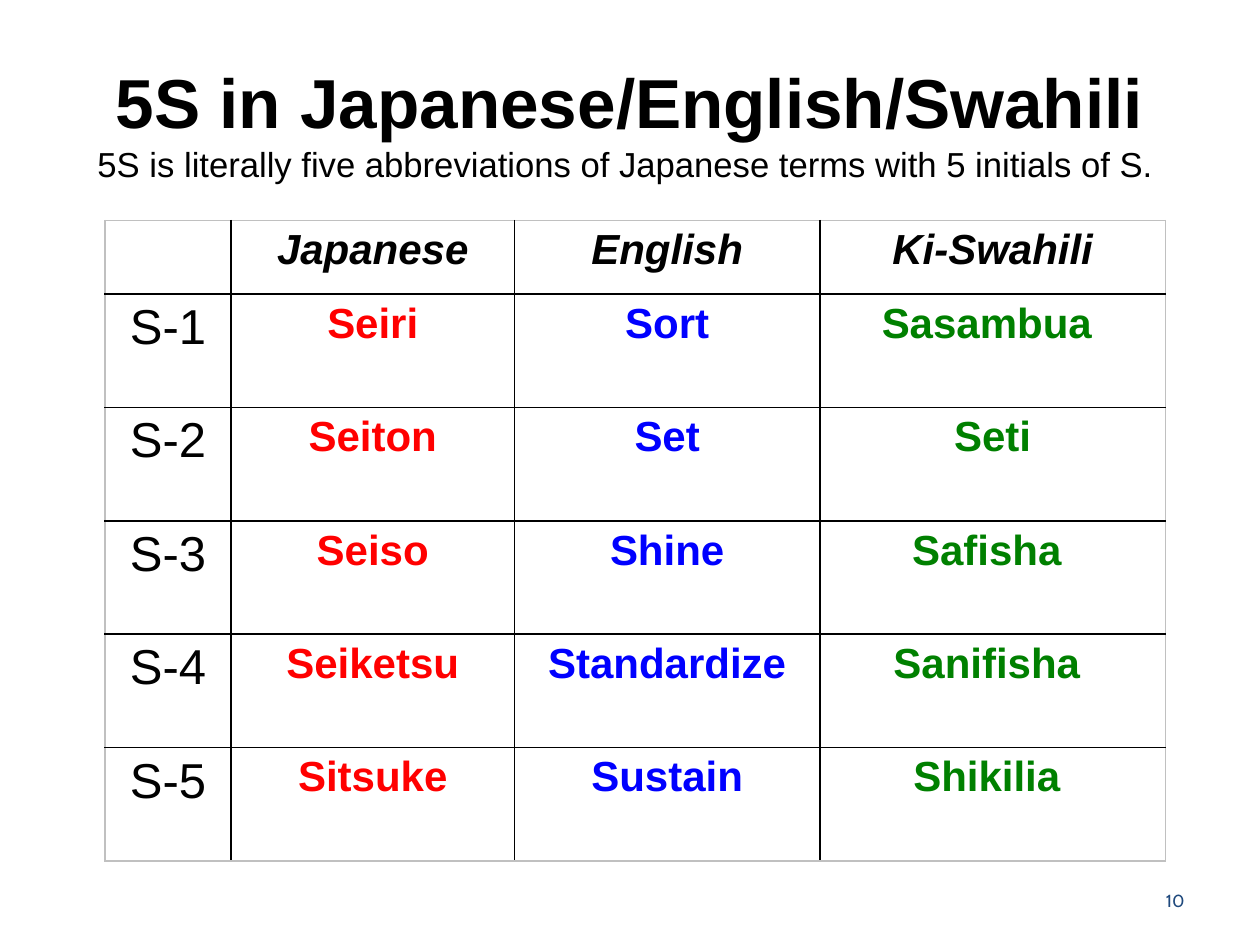
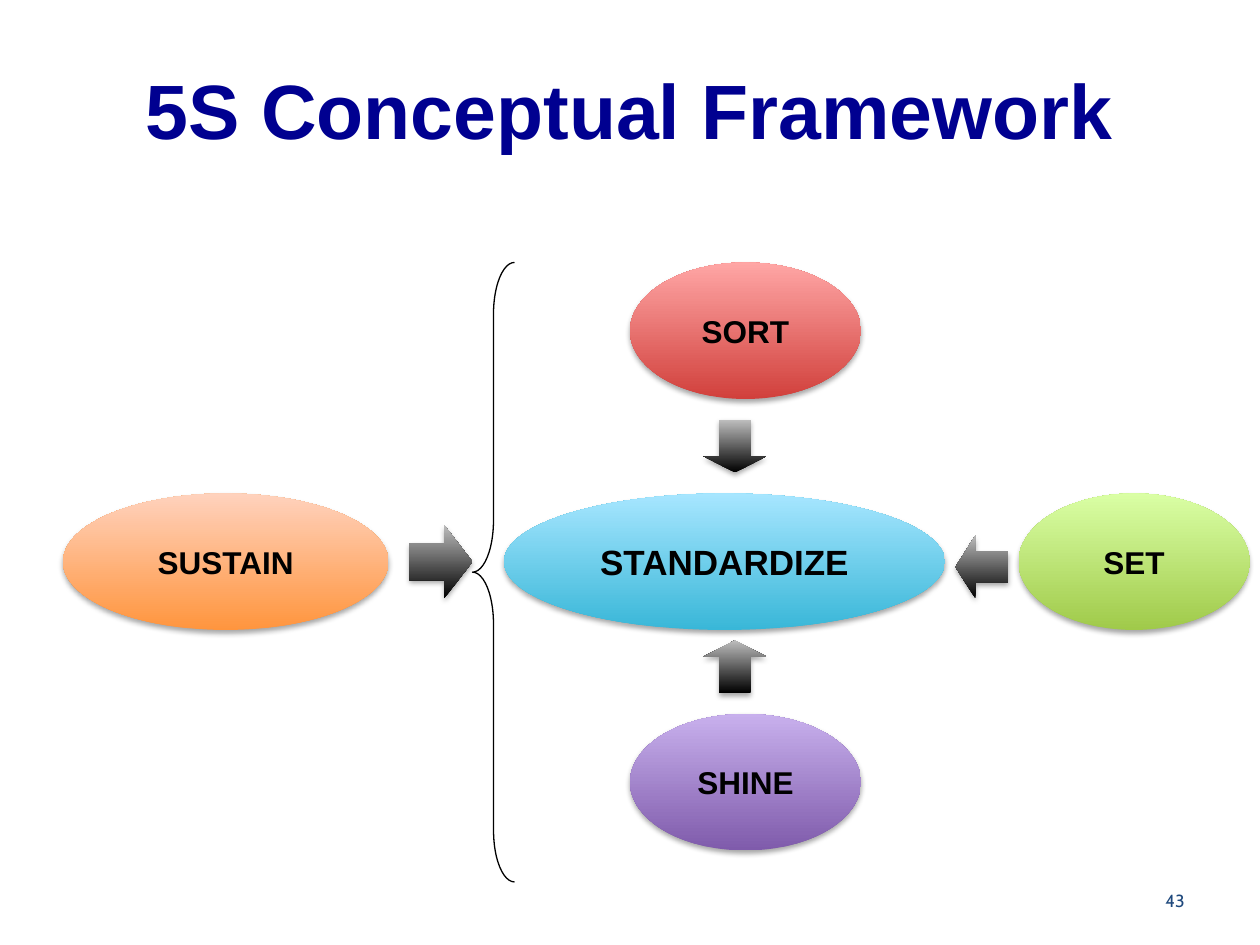
from dataclasses import dataclass
from lxml import etree
from pptx import Presentation
from pptx import util as u
from pptx.dml.color import RGBColor
from pptx.enum import shapes, text
from pptx.oxml import ns

Pt = u.Pt
MSO = shapes.MSO_SHAPE


@dataclass(frozen=True)
class Theme:
    font: str = "Arial"
    number_font: str = "Cabin"
    ink: str = "000000"
    navy: str = "000090"
    number: str = "1F497D"
    frame: str = "C0C0C0"
    arrow: tuple = ("000000", "BDBDBD")
    red: str = "FF0000"
    blue: str = "0000FF"
    green: str = "008000"
    title: float = 44
    table_title: float = 39.6
    subtitle: float = 19.8
    label: float = 28
    term: float = 24
    hub: float = 20
    node: float = 18
    page: float = 10


T = Theme()

# Content: terms table
TERMS_TITLE = "5S in Japanese/English/Swahili"
TERMS_SUBTITLE = "5S is literally five abbreviations of Japanese terms with 5 initials of S. "
TERMS = [
    ("", "Japanese", "English", "Ki-Swahili"),
    ("S-1", "Seiri", "Sort", "Sasambua "),
    ("S-2", "Seiton", "Set", "Seti"),
    ("S-3", "Seiso", "Shine", "Safisha "),
    ("S-4", "Seiketsu", "Standardize", "Sanifisha "),
    ("S-5", "Sitsuke", "Sustain", "Shikilia "),
]
COL_WIDTHS = (72, 162, 174.5, 197.5)
HEADER_HEIGHT, ROW_HEIGHT = 42, 64.8
HEADER_STYLE = dict(size=T.term, color=T.ink, bold=True, italic=True)
COLUMN_STYLES = [dict(size=T.label, color=T.ink)] + [
    dict(size=T.term, color=c, bold=True) for c in (T.red, T.blue, T.green)]

# Content: framework diagram, on rows and columns shared by its parts
FRAMEWORK_TITLE = "5S Conceptual Framework"
TOP, MIDDLE, BOTTOM = 150, 282, 408
NODE_W, NODE_H, CENTRE_X, ARROW_X = 132, 78, 360, 402
BRACE = (270, TOP, 24, 354)
NODES = [  # name, left, top, width, gradient, text size
    ("SORT", CENTRE_X, TOP, NODE_W, ("D1403C", "FFA6A5"), T.node),
    ("SET", 582, MIDDLE, NODE_W, ("A0CA4A", "DAFFA5"), T.node),
    ("SHINE", CENTRE_X, BOTTOM, NODE_W, ("7F5BAB", "C8B0ED"), T.node),
    ("STANDARDIZE", 288, MIDDLE, 252, ("39B7D8", "A7E6FF"), T.hub),
    ("SUSTAIN", 36, MIDDLE, 186, ("FF953E", "FFD2BD"), T.node),
]
ARROWS = [  # shape, box, head length ratio
    (MSO.RIGHT_ARROW, (234, 300, 36, 42), 0.45),
    (MSO.DOWN_ARROW, (ARROW_X, 240, 36, 30), 0.31),
    (MSO.LEFT_ARROW, (546, 306, 30, 36), 0.38),
    (MSO.UP_ARROW, (ARROW_X, 366, 36, 30), 0.31),
]


def pts(box):
    return [Pt(v) for v in box]


def sub(parent, tag, **attrs):
    return etree.SubElement(parent, ns.qn(tag), {k: str(v) for k, v in attrs.items()})


def add_run(p, words, size, color, name=T.font, bold=False, italic=False):
    r = p.add_run()
    r.text = words
    for key, value in dict(size=Pt(size), name=name, bold=bold, italic=italic).items():
        setattr(r.font, key, value)
    r.font.color.rgb = RGBColor.from_string(color)


def setup_frame(tf, align, **fmt):
    for key, value in dict(word_wrap=True, vertical_anchor=text.MSO_ANCHOR.MIDDLE, **fmt).items():
        setattr(tf, key, value)
    p = tf.paragraphs[0]
    p.alignment = align
    return p


def add_title(s, top, height, *lines):
    tb = s.shapes.add_textbox(*pts((36, top, 648, height)))
    p = setup_frame(tb.text_frame, text.PP_ALIGN.CENTER, margin_top=Pt(6), margin_bottom=0)
    for i, (words, style) in enumerate(lines):
        if i:
            p.add_line_break()
        add_run(p, words, **style)


def add_page_number(s, number):
    tb = s.shapes.add_textbox(*pts((516, 500.4, 168, 28.8)))
    p = setup_frame(tb.text_frame, text.PP_ALIGN.RIGHT)
    add_run(p, number, T.page, T.number, T.number_font)


def add_glossy(s, kind, box, colors):
    """A borderless shape with a vertical gradient and a soft shadow below."""
    sp = s.shapes.add_shape(kind, *pts(box))
    sp.line.fill.background()
    sp.fill.gradient()
    sp.fill.gradient_angle = 90
    for stop, color in zip(sp.fill.gradient_stops, colors):
        stop.color.rgb = RGBColor.from_string(color)
    sp.shadow.inherit = False
    effects = sp._element.spPr.find(ns.qn("a:effectLst"))
    shadow = sub(effects, "a:outerShdw", blurRad=Pt(3.1), dist=Pt(1.8), dir=5400000, rotWithShape=0)
    sub(sub(shadow, "a:srgbClr", val=T.ink), "a:alpha", val=35000)
    return sp


def set_borders(cell, colors):
    tcPr = cell._tc.get_or_add_tcPr()
    for side, color in zip("LRTB", colors):
        ln = sub(tcPr, f"a:ln{side}", w=Pt(1))
        sub(sub(ln, "a:solidFill"), "a:srgbClr", val=color)


def build_terms(s):
    # Table grid
    n_rows, n_cols = len(TERMS), len(COL_WIDTHS)
    heights = [HEADER_HEIGHT] + [ROW_HEIGHT] * (n_rows - 1)
    box = (60, 126, sum(COL_WIDTHS), sum(heights))
    tbl = s.shapes.add_table(n_rows, n_cols, *pts(box)).table
    tbl.first_row = tbl.horz_banding = False
    for col, width in zip(tbl.columns, COL_WIDTHS):
        col.width = Pt(width)
    for row, height in zip(tbl.rows, heights):
        row.height = Pt(height)

    # Cells: grey outer frame, black inner lines
    for i, terms in enumerate(TERMS):
        for j, term in enumerate(terms):
            cell = tbl.cell(i, j)
            outer = (j == 0, j == n_cols - 1, i == 0, i == n_rows - 1)
            set_borders(cell, [T.frame if edge else T.ink for edge in outer])
            cell.fill.background()
            if term:
                p = cell.text_frame.paragraphs[0]
                p.alignment = text.PP_ALIGN.CENTER
                add_run(p, term, **(COLUMN_STYLES[j] if i else HEADER_STYLE))

    add_title(s, 21.6, 90,
              (TERMS_TITLE, dict(size=T.table_title, color=T.ink, bold=True)),
              (TERMS_SUBTITLE, dict(size=T.subtitle, color=T.ink)))


def build_framework(s):
    # Brace
    sp = s.shapes.add_shape(MSO.LEFT_BRACE, *pts(BRACE))
    sp.shadow.inherit = False
    sp.fill.background()
    sp.line.color.rgb = RGBColor.from_string(T.ink)
    sp.line.width = Pt(0.75)
    sp.adjustments[0] = 1.23

    # Arrows
    for kind, box, head in ARROWS:
        add_glossy(s, kind, box, T.arrow).adjustments[1] = head

    # Nodes
    for name, left, top, width, colors, size in NODES:
        sp = add_glossy(s, MSO.OVAL, (left, top, width, NODE_H), colors)
        p = setup_frame(sp.text_frame, text.PP_ALIGN.CENTER)
        add_run(p, name, size, T.ink, bold=True)

    add_title(s, 26.4, 66, (FRAMEWORK_TITLE, dict(size=T.title, color=T.navy, bold=True)))


def main():
    prs = Presentation()
    prs.slide_width, prs.slide_height = Pt(720), Pt(540)
    for build, number in ((build_terms, "10"), (build_framework, "43")):
        s = prs.slides.add_slide(prs.slide_layouts[6])
        build(s)
        add_page_number(s, number)
    prs.save("out.pptx")


if __name__ == "__main__":
    main()
